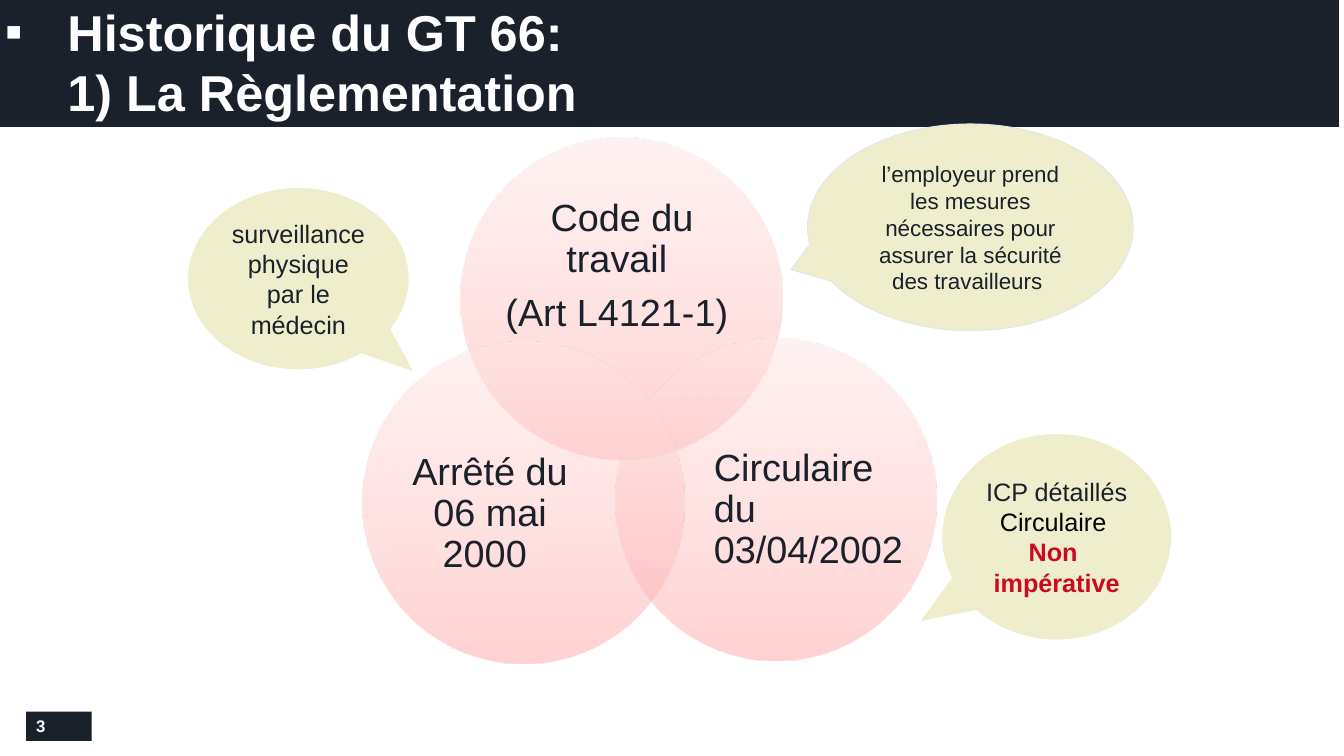
import pptx
import pptx.util
import pptx.oxml
import pptx.dml.color
import pptx.enum.shapes
import pptx.enum.text

PX = 9144  # EMU per px, 100 px to the inch
HUES = {"navy": "1A212B", "white": "FFFFFF", "black": "000000", "red": "CD0920",
        "olive": "EEEECC", "grey": "E6E6E6",
        "rose": "FFA5A7", "pink": "FFC0C1", "pale": "FFE7E7"}
NS = 'xmlns:a="http://schemas.openxmlformats.org/drawingml/2006/main"'
KIND = pptx.enum.shapes.MSO_SHAPE
ALIGN = pptx.enum.text.PP_ALIGN
ANCHOR = pptx.enum.text.MSO_ANCHOR

deck = pptx.Presentation()
deck.slide_width, deck.slide_height = 1333 * PX, 750 * PX
slide = deck.slides.add_slide(deck.slide_layouts[6])


def add_form(kind, box, fill=None, line=None):
    form = slide.shapes.add_shape(kind, *[n * PX for n in box])
    form.shadow.inherit = False
    if fill:
        form.fill.solid()
        form.fill.fore_color.rgb = pptx.dml.color.RGBColor.from_string(HUES[fill])
    if line:
        form.line.color.rgb = pptx.dml.color.RGBColor.from_string(HUES[line])
        form.line.width = pptx.util.Pt(0.75)
    else:
        form.line.fill.background()
    form.text_frame.word_wrap = True
    return form


def add_run(para, text, size, hue, bold=False):
    run = para.add_run()
    run.text = text
    run.font.name = "Arial"
    run.font.size = pptx.util.Pt(size)
    run.font.bold = bold
    run.font.color.rgb = pptx.dml.color.RGBColor.from_string(HUES[hue])


# Title bar
bar = add_form(KIND.RECTANGLE, (-5, 0, 1333, 126), "navy")
bar.text_frame.vertical_anchor = ANCHOR.BOTTOM
para = bar.text_frame.paragraphs[0]
para.alignment = ALIGN.LEFT
props = para._p.get_or_add_pPr()
props.set("marL", str(62 * PX))
props.set("indent", str(-62 * PX))
props.append(pptx.oxml.parse_xml(f'<a:buFont {NS} typeface="Arial"/>'))
props.append(pptx.oxml.parse_xml(f'<a:buChar {NS} char="▪"/>'))
add_run(para, "Historique du GT 66:", 36, "white", True)
para.add_line_break()
add_run(para, "1) La Règlementation", 36, "white", True)

# Page number
page = add_form(KIND.RECTANGLE, (26, 706, 65, 29), "navy")
para = page.text_frame.paragraphs[0]
para.alignment = ALIGN.LEFT
add_run(para, "3", 12, "white", True)

# Three overlapping circles with their labels
stops = "".join(
    f'<a:gs pos="{at * 1000}"><a:srgbClr val="{HUES[hue]}"><a:alpha val="50000"/></a:srgbClr></a:gs>'
    for at, hue in ((0, "rose"), (35, "pink"), (100, "pale")))
rings = [
    ((457, 137), (500, 193, 234, 144), ALIGN.CENTER, ["Code du travail ", "(Art L4121-1) "]),
    ((610, 336), (708, 418, 192, 176), ALIGN.LEFT, ["Circulaire du 03/04/2002"]),
    ((360, 339), (390, 422, 192, 176), ALIGN.CENTER, ["Arrêté du 06 mai 2000 "]),
]
for spot, box, align, lines in rings:
    ring = add_form(KIND.OVAL, (*spot, 319, 319))
    ring.fill.gradient()
    grad = ring.fill._xPr.gradFill
    grad.getparent().replace(grad, pptx.oxml.parse_xml(
        f'<a:gradFill {NS} rotWithShape="1"><a:gsLst>{stops}</a:gsLst>'
        '<a:lin ang="16200000" scaled="0"/></a:gradFill>'))

    label = slide.shapes.add_textbox(*[n * PX for n in box])
    frame = label.text_frame
    frame.word_wrap = True
    frame.vertical_anchor = ANCHOR.MIDDLE
    frame.margin_left = frame.margin_right = frame.margin_top = frame.margin_bottom = 0
    for i, text in enumerate(lines):
        para = frame.add_paragraph() if i else frame.paragraphs[0]
        para.alignment = align
        para.line_spacing = 0.9
        para.space_after = pptx.util.Pt(9.45)
        add_run(para, text, 27, "navy")

# Speech bubbles
notes = [
    ((801, 123, 323, 205), (-0.551, 0.205), "grey", 16,
     [("l’employeur prend les mesures nécessaires pour assurer la sécurité des travailleurs ", "navy", False)]),
    ((186, 186, 220, 181), (0.523, 0.513), "white", 18,
     [("surveillance physique par le médecin", "navy", False)]),
    ((934, 430, 228, 205), (-0.598, 0.412), "white", 18,
     [("ICP détaillés", "navy", False), ("Circulaire ", "black", False),
      ("Non ", "red", True), ("impérative", "red", True)]),
]
for box, tip, line, size, lines in notes:
    note = add_form(KIND.OVAL_CALLOUT, box, "olive", line)
    note.adjustments[0], note.adjustments[1] = tip
    frame = note.text_frame
    frame.vertical_anchor = ANCHOR.MIDDLE
    for i, (text, hue, bold) in enumerate(lines):
        para = frame.add_paragraph() if i else frame.paragraphs[0]
        para.alignment = ALIGN.CENTER
        add_run(para, text, size, hue, bold)

deck.save("out.pptx")
